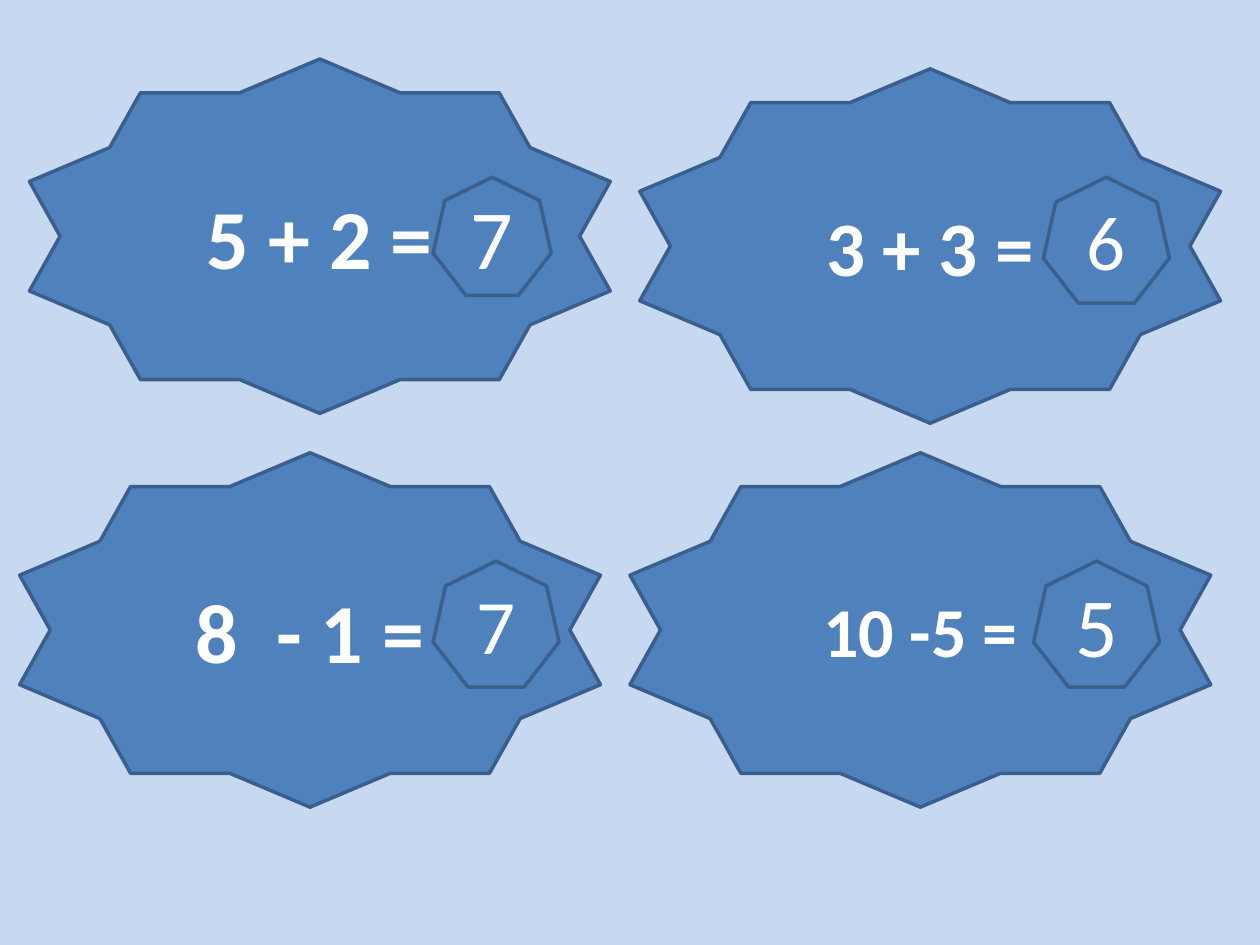
import dataclasses

import pptx
import pptx.dml.color
import pptx.enum.shapes
import pptx.enum.text
import pptx.util

Pt = pptx.util.Pt
RGB = pptx.dml.color.RGBColor.from_string
SHAPE = pptx.enum.shapes.MSO_SHAPE


@dataclasses.dataclass(frozen=True)
class Theme:
    background: str = "C6D9F1"
    fill: str = "4F81BD"
    outline: str = "3A5F8C"
    text: str = "FFFFFF"
    font: str = "Calibri"
    line_width: float = 2
    small: float = 40
    medium: float = 44
    large: float = 48


THEME = Theme()
STAR_SIZE = (331.88, 202.5)


def write_text(sp, text, *, size, bold=False):
    """Put one centred line of text in the middle of a shape."""
    tf = sp.text_frame
    tf.word_wrap = True
    tf.vertical_anchor = pptx.enum.text.MSO_ANCHOR.MIDDLE
    p = tf.paragraphs[0]
    p.alignment = pptx.enum.text.PP_ALIGN.CENTER
    r = p.add_run()
    r.text = text
    r.font.name = THEME.font
    r.font.size = Pt(size)
    r.font.bold = bold
    r.font.color.rgb = RGB(THEME.text)


def add_badge(s, kind, box, text, **text_format):
    """Add a filled, outlined shape with its text."""
    sp = s.shapes.add_shape(kind, *(Pt(v) for v in box))
    sp.shadow.inherit = False
    sp.fill.solid()
    sp.fill.fore_color.rgb = RGB(THEME.fill)
    sp.line.color.rgb = RGB(THEME.outline)
    sp.line.width = Pt(THEME.line_width)
    write_text(sp, text, **text_format)


def add_sum_card(s, box, problem, problem_size, answer, answer_size,
                 offset=(230.62, 61.88), side=72):
    """Add a star with a sum, and its answer in a heptagon on the right."""
    left, top = box[:2]
    add_badge(s, SHAPE.STAR_10_POINT, box, problem, size=problem_size, bold=True)
    answer_box = (left + offset[0], top + offset[1], side, side)
    add_badge(s, SHAPE.HEPTAGON, answer_box, answer, size=answer_size)


def main():
    prs = pptx.Presentation()
    prs.slide_width, prs.slide_height = Pt(720), Pt(540)
    s = prs.slides.add_slide(prs.slide_layouts[6])
    s.background.fill.solid()
    s.background.fill.fore_color.rgb = RGB(THEME.background)

    # Top row
    add_sum_card(s, (16.88, 33.75, *STAR_SIZE), "5 + 2 =", THEME.large,
                 "7", THEME.large, offset=(230.62, 67.5), side=67.5)
    add_sum_card(s, (365.62, 39.38, *STAR_SIZE), "3 + 3 =", THEME.medium,
                 "6", THEME.medium)

    # Bottom row
    add_sum_card(s, (360, 258.75, *STAR_SIZE), "10 -5 =", THEME.small,
                 "5", THEME.large)
    add_sum_card(s, (11.25, 258.75, *STAR_SIZE), "8  - 1 =", THEME.large,
                 "7", THEME.medium, offset=(236.25, 61.88))

    prs.save("out.pptx")


if __name__ == "__main__":
    main()
